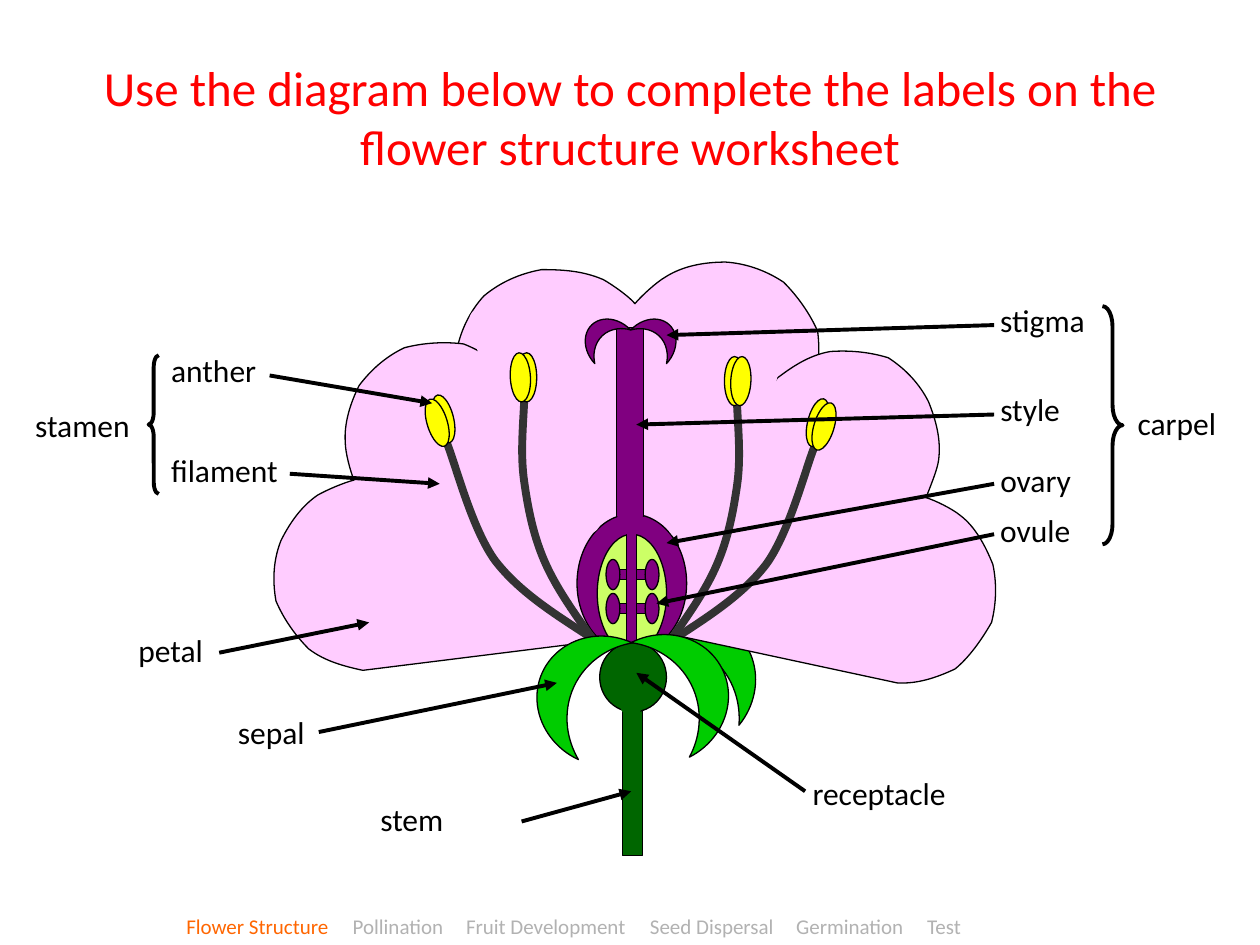
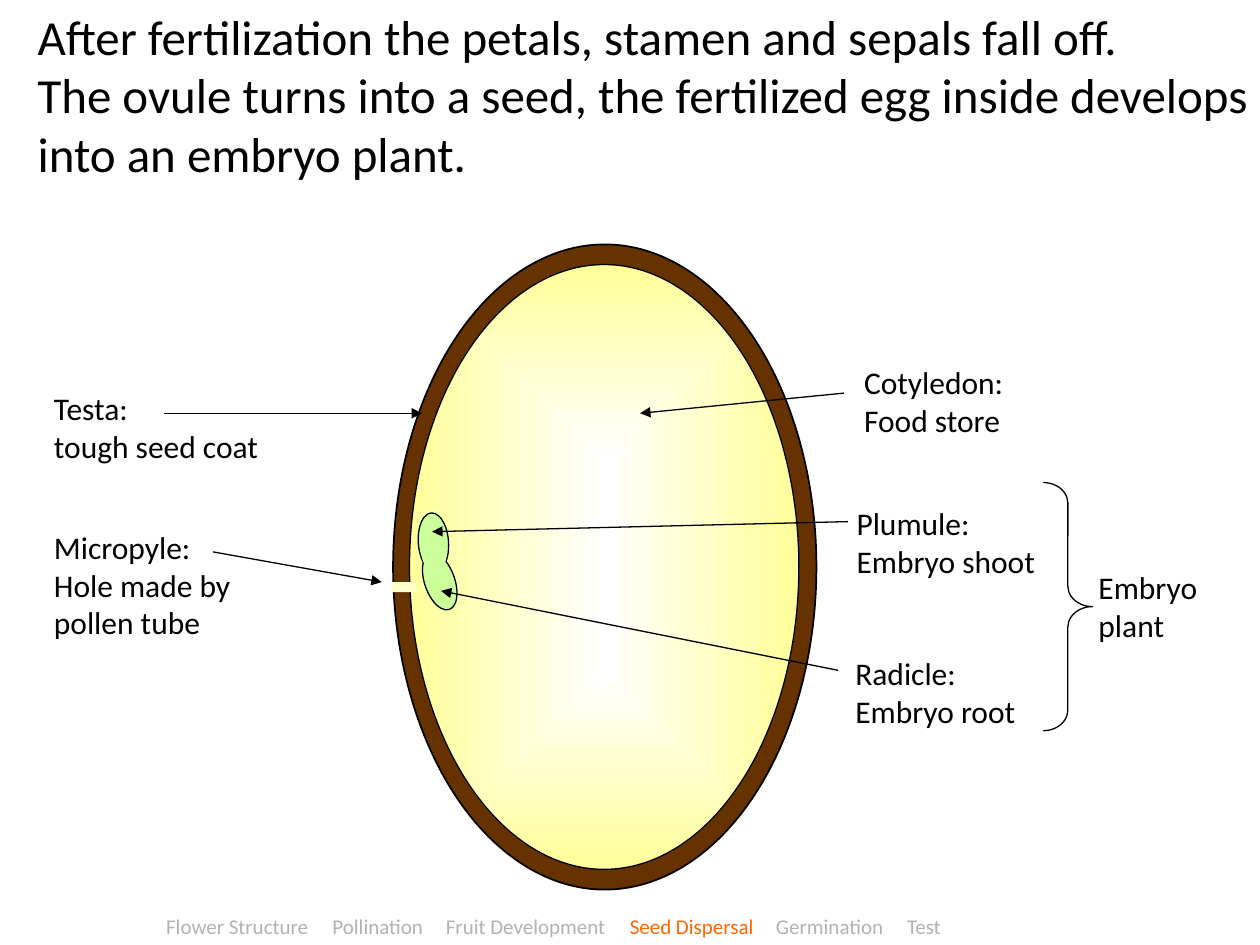
from lxml.etree import SubElement
from pptx import Presentation
from pptx.dml.color import RGBColor
from pptx.enum.shapes import MSO_CONNECTOR, MSO_SHAPE
from pptx.enum.text import MSO_ANCHOR, MSO_AUTO_SIZE, PP_ALIGN
from pptx.oxml.ns import qn
from pptx.util import Inches, Pt

BLACK = RGBColor(0x00, 0x00, 0x00)
RED = RGBColor(0xFF, 0x00, 0x00)
ORANGE = RGBColor(0xFF, 0x66, 0x00)
GREY = RGBColor(0xB2, 0xB2, 0xB2)
PINK = RGBColor(0xFF, 0xCC, 0xFF)
PURPLE = RGBColor(0x80, 0x00, 0x80)
LIME = RGBColor(0xCC, 0xFF, 0x66)
CHARCOAL = RGBColor(0x33, 0x33, 0x33)
YELLOW = RGBColor(0xFF, 0xFF, 0x00)
STEM_GREEN = RGBColor(0x00, 0x66, 0x00)
SEPAL_GREEN = RGBColor(0x00, 0xCC, 0x00)
BROWN = RGBColor(0x66, 0x33, 0x00)
WHITE = RGBColor(0xFF, 0xFF, 0xFF)
PALE_YELLOW = RGBColor(0xFF, 0xFF, 0x99)
CREAM = RGBColor(0xFF, 0xFF, 0xCC)
EMBRYO_GREEN = RGBColor(0xCC, 0xFF, 0x99)

TITLE_ONLY, BLANK = 5, 6
TOPICS = ("Flower Structure", "Pollination", "Fruit Development",
          "Seed Dispersal", "Germination", "Test")
TOPIC_STOPS = (1.32, 2.22, 3.68, 4.84, 5.88)


def apply(target, values):
    for name, value in values.items():
        setattr(target, name, value)


def box(left, top, width, height):
    return [Inches(value) for value in (left, top, width, height)]


def mirrored(numbers):
    return tuple(round(10.01 - value if index % 2 == 0 else value - 0.03, 2)
                 for index, value in enumerate(numbers))


class Lesson:
    def __init__(self):
        self.deck = Presentation()
        apply(self.deck, {"slide_width": Inches(10), "slide_height": Inches(7.5)})
        self.slide = self.canvas = None
        self.pen = 0.75

    def start(self, layout, pen):
        self.slide = self.deck.slides.add_slide(self.deck.slide_layouts[layout])
        self.pen = pen
        self.ungroup()

    def group(self):
        self.canvas = self.slide.shapes.add_group_shape().shapes

    def ungroup(self):
        self.canvas = self.slide.shapes

    def font(self, target, size, color):
        apply(target, {"name": "Calibri", "size": Pt(size)})
        target.color.rgb = color

    def paint(self, shape, fill, line, weight):
        shape.shadow.inherit = False
        if fill is None:
            shape.fill.background()
        else:
            shape.fill.solid()
            shape.fill.fore_color.rgb = fill
        if line is None:
            shape.line.fill.background()
        else:
            shape.line.color.rgb = line
            shape.line.width = Pt(weight)
        return shape

    def shape(self, kind, place, fill, line=BLACK, weight=0.75, rotation=0):
        shape = self.canvas.add_shape(kind, *box(*place))
        shape.rotation = rotation
        return self.paint(shape, fill, line, weight)

    def brace(self, kind, place, curl):
        brace = self.shape(kind, place, None, weight=self.pen)
        brace.adjustments[0] = curl

    def outline(self, start, segments, fill=None, line=BLACK, weight=0.75):
        builder = self.canvas.build_freeform(Inches(start[0]), Inches(start[1]))
        builder.add_line_segments(
            [(Inches(segment[-2]), Inches(segment[-1])) for segment in segments],
            close=fill is not None)
        shape = self.paint(builder.convert_to_shape(), fill, line, weight)
        track = next(shape.element.iter(qn("a:path")))
        for straight, segment in zip(track.findall(qn("a:lnTo")), segments):
            if len(segment) == 6:
                curve = SubElement(track, qn("a:cubicBezTo"))
                for x, y in zip(segment[::2], segment[1::2]):
                    SubElement(curve, qn("a:pt"),
                               x=str(Inches(x) - builder.shape_offset_x),
                               y=str(Inches(y) - builder.shape_offset_y))
                track.replace(straight, curve)

    def arrow(self, start, end):
        arrow = self.canvas.add_connector(
            MSO_CONNECTOR.STRAIGHT, *[Inches(value) for value in start + end])
        arrow.line.color.rgb = BLACK
        arrow.line.width = Pt(self.pen)
        properties = arrow.element.spPr
        SubElement(properties.find(qn("a:ln")), qn("a:tailEnd"), type="triangle")
        SubElement(properties, qn("a:effectLst"))

    def title(self, text, place):
        title = self.slide.shapes.title
        apply(title, dict(zip(("left", "top", "width", "height"), box(*place))))
        title.text_frame.text = text
        title.text_frame.vertical_anchor = MSO_ANCHOR.MIDDLE
        paragraph = title.text_frame.paragraphs[0]
        paragraph.alignment = PP_ALIGN.CENTER
        self.font(paragraph.runs[0].font, 28, RED)

    def text(self, text, place, size=18, wrap=False):
        frame = self.canvas.add_textbox(*box(*place)).text_frame
        frame.text = text
        apply(frame, {"word_wrap": wrap,
                      "auto_size": MSO_AUTO_SIZE.SHAPE_TO_FIT_TEXT})
        for paragraph in frame.paragraphs:
            for run in paragraph.runs:
                self.font(run.font, size, BLACK)
        return frame

    def footer(self, current, left):
        frame = self.text("", (left, 7.2, 7.08, 0.3), 12, wrap=True)
        paragraph = frame.paragraphs[0]
        stops = SubElement(paragraph._p.get_or_add_pPr(), qn("a:tabLst"))
        for stop in TOPIC_STOPS:
            SubElement(stops, qn("a:tab"), pos=str(Inches(stop)), algn="l")
        for index, topic in enumerate(TOPICS):
            run = paragraph.add_run()
            run.text = "\t" + topic if index else topic
            self.font(run.font, 12, ORANGE if topic == current else GREY)


OVAL, RECT, MOON = MSO_SHAPE.OVAL, MSO_SHAPE.RECTANGLE, MSO_SHAPE.MOON

PETALS = (
    ((5.04, 2.41), (
        (4.99, 2.35, 4.86, 2.26, 4.79, 2.22), (4.63, 2.15, 4.47, 2.14, 4.3, 2.14),
        (4.13, 2.17, 3.97, 2.24, 3.84, 2.35), (3.73, 2.47, 3.66, 2.62, 3.63, 2.76),
        (3.6, 2.93, 3.64, 3.08, 3.69, 3.23), (5.17, 5.1), (6.44, 3.1),
        (6.5, 2.95, 6.51, 2.79, 6.49, 2.63), (6.43, 2.49, 6.33, 2.35, 6.22, 2.24),
        (6.07, 2.14, 5.91, 2.09, 5.76, 2.08), (5.59, 2.08, 5.42, 2.11, 5.28, 2.2),
        (5.21, 2.24, 5.09, 2.35, 5.04, 2.41))),
    ((7.35, 3.95), (
        (7.38, 3.87, 7.44, 3.73, 7.45, 3.65), (7.47, 3.49, 7.43, 3.34, 7.37, 3.19),
        (7.3, 3.05, 7.19, 2.93, 7.05, 2.84), (6.89, 2.79, 6.73, 2.78, 6.59, 2.79),
        (6.42, 2.82, 6.29, 2.91, 6.17, 3), (4.84, 4.93), (7.12, 5.42),
        (7.28, 5.43, 7.43, 5.38, 7.58, 5.31), (7.69, 5.22, 7.79, 5.08, 7.87, 4.94),
        (7.91, 4.78, 7.91, 4.62, 7.88, 4.48), (7.82, 4.33, 7.74, 4.18, 7.62, 4.09),
        (7.56, 4.04, 7.42, 3.97, 7.35, 3.95))),
    ((2.81, 3.81), (
        (2.73, 3.83, 2.59, 3.89, 2.52, 3.93), (2.39, 4.02, 2.3, 4.15, 2.23, 4.29),
        (2.17, 4.44, 2.16, 4.6, 2.19, 4.77), (2.25, 4.91, 2.34, 5.04, 2.45, 5.15),
        (2.58, 5.25, 2.74, 5.29, 2.88, 5.32), (5.21, 5.03), (4.07, 3),
        (3.97, 2.88, 3.83, 2.79, 3.68, 2.73), (3.53, 2.71, 3.36, 2.72, 3.21, 2.76),
        (3.06, 2.83, 2.94, 2.94, 2.85, 3.06), (2.78, 3.2, 2.73, 3.36, 2.74, 3.51),
        (2.74, 3.59, 2.78, 3.74, 2.81, 3.81))),
)
FILAMENTS = (
    ((5.3, 5.11), ((5.45, 4.9, 5.6, 4.69, 5.69, 4.48),
                   (5.78, 4.27, 5.82, 4.06, 5.85, 3.85),
                   (5.88, 3.64, 5.86, 3.43, 5.85, 3.22))),
    ((5.29, 5.11), ((5.58, 4.92, 5.88, 4.74, 6.08, 4.48),
                    (6.27, 4.22, 6.4, 3.69, 6.47, 3.53))),
)
ANTHERS = ((5.83, 3.03, 0), (5.88, 3.03, 3.1), (6.49, 3.36, 14.1), (6.54, 3.39, 17))

lesson = Lesson()

lesson.start(TITLE_ONLY, pen=2.25)
lesson.group()
lesson.shape(MOON, (5.37, 4.71, 0.55, 1.02), SEPAL_GREEN, rotation=129.4)
for start, segments in PETALS:
    lesson.outline(start, segments, PINK)
lesson.shape(OVAL, (4.58, 4.08, 0.87, 1.1), PURPLE)
lesson.shape(RECT, (4.89, 2.6, 0.22, 1.5), PURPLE)
for left, rotation in ((4.66, 46.6), (5.11, 133.2)):
    lesson.shape(MOON, (left, 2.47, 0.24, 0.39), PURPLE, rotation=rotation)
lesson.shape(RECT, (4.89, 4.24, 0.16, 0.16), PURPLE, None, rotation=270)
lesson.shape(RECT, (4.88, 4.02, 0.24, 0.2), PURPLE, None, rotation=90)
for place, rotation in (((5.51, 2.43, 0.55, 1.91), 14.4),
                        ((3.96, 2.36, 0.57, 1.96), 344.1)):
    lesson.shape(MSO_SHAPE.ROUNDED_RECTANGLE, place, PINK, None, rotation=rotation)
lesson.shape(OVAL, (4.74, 4.24, 0.55, 0.94), LIME)
lesson.shape(RECT, (4.97, 4.16, 0.08, 0.94), PURPLE)
lesson.shape(RECT, (4.91, 4.08, 0.19, 0.16), PURPLE, None)
for top in (4.79, 4.52):
    for stalk, ovule in ((5.05, 5.12), (4.89, 4.81)):
        lesson.shape(RECT, (stalk, top, 0.08, 0.08), PURPLE)
        lesson.shape(OVAL, (ovule, top - 0.08, 0.11, 0.24), PURPLE)
for side in (tuple, mirrored):
    for start, segments in FILAMENTS:
        lesson.outline(side(start), [side(segment) for segment in segments],
                       line=CHARCOAL, weight=4.5)
    for x, y, tilt in ANTHERS:
        x, y = side((x, y))
        lesson.shape(OVAL, (x - 0.08, y - 0.2, 0.16, 0.39), YELLOW,
                     rotation=tilt if side is tuple else -tilt)
lesson.shape(RECT, (4.94, 5.63, 0.16, 1.16), STEM_GREEN)
lesson.shape(OVAL, (4.76, 5.1, 0.53, 0.55), STEM_GREEN)
lesson.shape(OVAL, (4.91, 5.4, 0.2, 0.29), STEM_GREEN, None)
for left, top, rotation in ((5.21, 4.92, 153), (4.28, 4.94, 24.8)):
    lesson.shape(MOON, (left, top, 0.55, 1.02), SEPAL_GREEN, rotation=rotation)
lesson.ungroup()

lesson.title("Use the diagram below to complete the labels on the "
             "flower structure worksheet", (0.5, 0.3, 9, 1.25))
for part, left, top, width, start, end in (
        ("stigma", 7.84, 2.34, 0.94, (7.89, 2.58), (5.29, 2.66)),
        ("style", 7.84, 3.05, 0.72, (7.89, 3.29), (5.05, 3.37)),
        ("ovary", 7.84, 3.61, 0.81, (7.89, 3.84), (5.29, 4.31)),
        ("ovule", 7.84, 4.01, 0.8, (7.89, 4.24), (5.21, 4.79)),
        ("sepal", 1.79, 5.61, 0.8, (2.53, 5.81), (4.42, 5.42)),
        ("anther", 1.26, 2.74, 0.91, (2.14, 2.98), (3.43, 3.2)),
        ("filament", 1.26, 3.53, 1.08, (2.3, 3.76), (3.49, 3.84)),
        ("petal", 1, 4.96, 0.74, (1.74, 5.18), (2.93, 4.94)),
        ("receptacle", 6.35, 6.09, 1.35, (6.39, 6.28), (5.05, 5.34)),
        ("stem", 2.92, 6.3, 0.76, (4.14, 6.52), (5.01, 6.28))):
    lesson.arrow(start, end)
    lesson.text(part, (left, top, width, 0.4))
lesson.brace(MSO_SHAPE.RIGHT_BRACE, (8.75, 2.43, 0.16, 1.89), 1.01)
lesson.text("carpel", (8.93, 3.16, 0.88, 0.4))
lesson.brace(MSO_SHAPE.LEFT_BRACE, (1.18, 2.82, 0.08, 1.1), 1.18)
lesson.text("stamen", (0.18, 3.17, 1.02, 0.4))
lesson.footer("Flower Structure", 1.38)

lesson.start(BLANK, pen=0.75)
lesson.group()
lesson.shape(OVAL, (3.12, 1.94, 3.36, 5.12), BROWN, weight=1)
cotyledon = lesson.shape(OVAL, (3.25, 2.1, 3.09, 4.8), PALE_YELLOW)
cotyledon.fill.gradient()
for stop, color in zip(cotyledon.fill.gradient_stops, (WHITE, PALE_YELLOW)):
    stop.color.rgb = color
gradient = cotyledon.element.spPr.find(qn("a:gradFill"))
gradient.remove(gradient.find(qn("a:lin")))
SubElement(SubElement(gradient, qn("a:path"), path="shape"), qn("a:fillToRect"),
           {edge: "50000" for edge in "ltrb"})
lesson.shape(RECT, (3.11, 4.62, 0.2, 0.08), CREAM, None)
lesson.ungroup()
summary = lesson.text(
    "After fertilization the petals, stamen and sepals fall off.\n"
    "The ovule turns into a seed, the fertilized egg inside develops "
    "into an embryo plant.", (0.2, 0, 9.8, 1.5), 28, wrap=True)
summary.margin_right = Inches(0.05)
lesson.group()
for place, rotation, line in (((3.32, 4.07, 0.24, 0.47), 355.8, BLACK),
                              ((3.37, 4.38, 0.24, 0.47), 341, BLACK),
                              ((3.35, 4.3, 0.19, 0.23), 349.9, None)):
    lesson.shape(OVAL, place, EMBRYO_GREEN, line, rotation=rotation)
lesson.ungroup()

for part, place, wrap, start, end in (
        ("Testa:\ntough seed coat", (0.33, 3.04, 1.98, 0.7), False,
         (1.3, 3.28), (3.35, 3.28)),
        ("Micropyle:\nHole made by pollen tube", (0.33, 4.14, 1.97, 1), True,
         (1.69, 4.38), (3.03, 4.62)),
        ("Cotyledon:\nFood store", (6.76, 2.83, 1.4, 0.7), False,
         (6.7, 3.12), (5.08, 3.28)),
        ("Plumule:\nEmbryo shoot", (6.7, 3.95, 1.74, 0.7), False,
         (6.73, 4.14), (3.43, 4.22)),
        ("Radicle:\vEmbryo root", (6.69, 5.14, 1.56, 0.7), False,
         (6.65, 5.32), (3.5, 4.69))):
    lesson.arrow(start, end)
    lesson.text(part, place, wrap=wrap)
lesson.brace(MSO_SHAPE.RIGHT_BRACE, (8.28, 3.83, 0.39, 1.97), 0.42)
lesson.text("Embryo\nplant", (8.62, 4.46, 1.13, 0.7))
lesson.footer("Seed Dispersal", 1.22)

lesson.deck.save("out.pptx")
